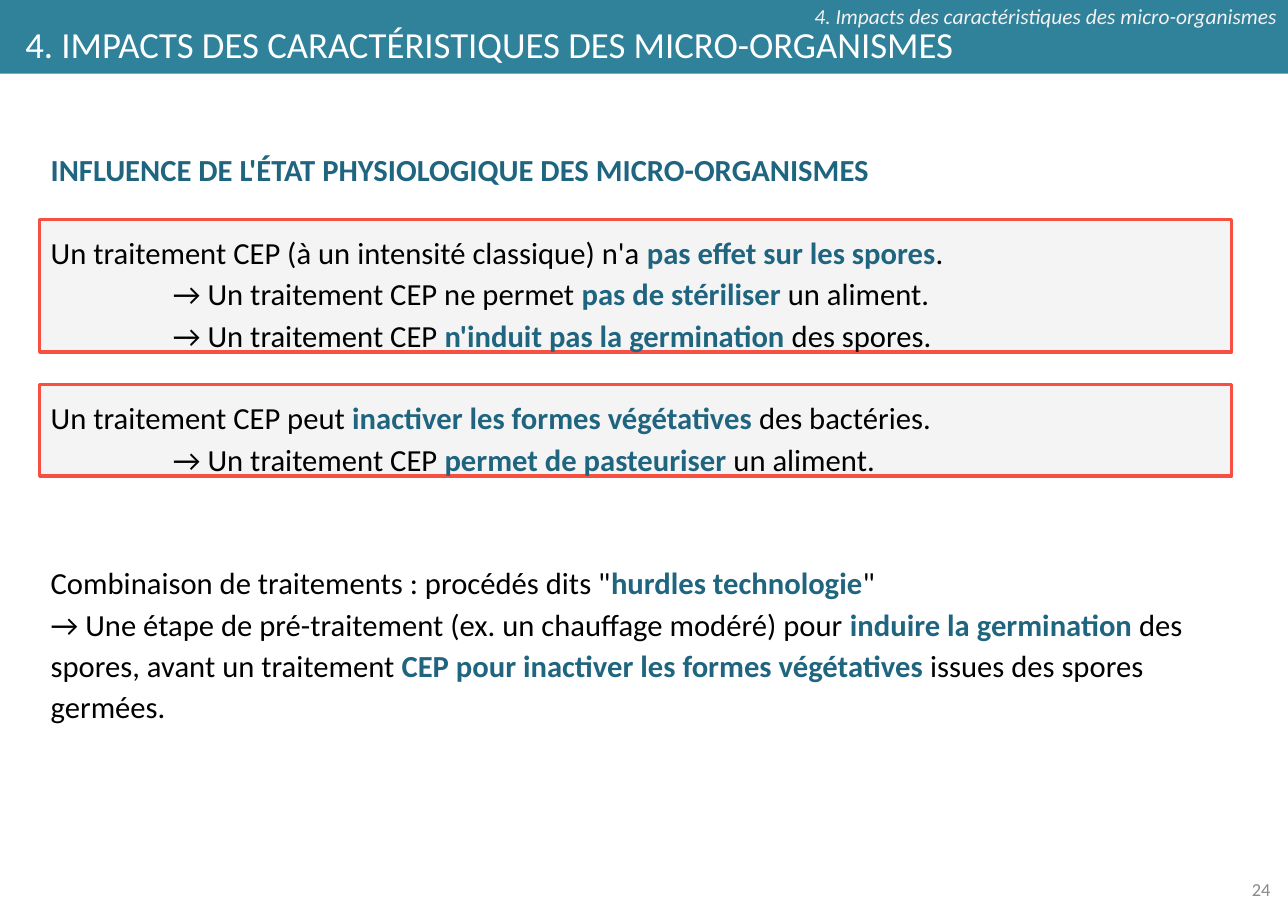
from lxml.etree import SubElement
from pptx import Presentation
from pptx.dml.color import RGBColor
from pptx.enum.shapes import MSO_SHAPE
from pptx.enum.text import MSO_ANCHOR, MSO_AUTO_SIZE, PP_ALIGN
from pptx.oxml.ns import qn
from pptx.util import Inches, Pt

TEAL = RGBColor(0x30, 0x81, 0x9A)
ACCENT = RGBColor(0x20, 0x65, 0x80)
RED = RGBColor(0xF7, 0x4F, 0x41)
PANEL = RGBColor(0xF4, 0xF4, 0xF4)
PALE = RGBColor(0xF2, 0xF2, 0xF2)
GREY = RGBColor(0x89, 0x89, 0x89)
WHITE = RGBColor(0xFF, 0xFF, 0xFF)
BLACK = RGBColor(0, 0, 0)

WIDTH, HEIGHT = Inches(11.69), Inches(8.27)
ROW = Pt(27)
LEFT = Inches(0.36)
PANEL_WIDTH = Inches(10.82)
PANEL_TOP = Inches(1.99)
ARROW_INDENT = Inches(1.11)

BODY = [
    ("**INFLUENCE DE L'ÉTAT PHYSIOLOGIQUE DES MICRO-ORGANISMES**", 0, 0),
    ("Un traitement CEP (à un intensité classique) n'a **pas effet sur les spores**.", 1, 0),
    ("→ Un traitement CEP ne permet **pas de stériliser **un aliment.", 0, ARROW_INDENT),
    ("→ Un traitement CEP **n'induit pas la germination **des spores.", 0, ARROW_INDENT),
    ("Un traitement CEP peut **inactiver les formes végétatives **des bactéries.", 1, 0),
    ("→ Un traitement CEP **permet de pasteuriser **un aliment.", 0, ARROW_INDENT),
    ('Combinaison de traitements : procédés dits "**hurdles technologie**"', 2, 0),
    ("→ Une étape de pré-traitement (ex. un chauffage modéré) pour "
     "**induire la germination **des spores, avant un traitement "
     "**CEP pour inactiver les formes végétatives **issues des spores germées.", 0, 0),
]


def write(p, text, size=20, color=BLACK, italic=False, align=PP_ALIGN.LEFT,
          line=None, before=0, indent=0):
    pPr = p._p.get_or_add_pPr()
    pPr.set("marL", str(indent))
    pPr.set("indent", "0")
    SubElement(pPr, qn("a:buNone"))
    p.alignment = align
    p.space_before = before
    if line:
        p.line_spacing = line
    for i, part in enumerate(text.split("**")):
        if part:
            r = p.add_run()
            r.text = part
            r.font.name = "Calibri"
            r.font.size = Pt(size)
            r.font.bold = i % 2 == 1
            r.font.italic = italic
            r.font.color.rgb = ACCENT if i % 2 else color


def add_panel(s, left, top, width, height, fill, line=None):
    sp = s.shapes.add_shape(MSO_SHAPE.RECTANGLE, left, top, width, height)
    sp.shadow.inherit = False
    sp.fill.solid()
    sp.fill.fore_color.rgb = fill
    if line:
        sp.line.color.rgb = line
        sp.line.width = Pt(2.25)
    else:
        sp.line.fill.background()


def set_frame(sp, left, top, width, height, anchor=MSO_ANCHOR.TOP):
    sp.left, sp.top, sp.width, sp.height = left, top, width, height
    tf = sp.text_frame
    tf.word_wrap = True
    tf.auto_size = MSO_AUTO_SIZE.NONE
    tf.vertical_anchor = anchor
    return tf


def add_label(s, left, top, width, height, text, **fmt):
    sp = s.shapes.add_textbox(left, top, width, height)
    tf = set_frame(sp, left, top, width, height, MSO_ANCHOR.MIDDLE)
    tf.margin_top = tf.margin_bottom = 0
    write(tf.paragraphs[0], text, align=PP_ALIGN.RIGHT, **fmt)


def fill_body(sp):
    tf = set_frame(sp, LEFT, Inches(1.28), Inches(10.97), Inches(5.4))
    for i, (text, skipped, indent) in enumerate(BODY):
        p = tf.add_paragraph() if i else tf.paragraphs[0]
        write(p, text, line=ROW, before=skipped * ROW, indent=indent)


def main():
    prs = Presentation()
    prs.slide_width, prs.slide_height = WIDTH, HEIGHT
    s = prs.slides.add_slide(prs.slide_layouts[1])
    title, body = s.shapes.title, s.placeholders[1]

    add_panel(s, 0, 0, WIDTH, Inches(0.67), TEAL)
    for first_row, lines in ((0, 3), (4, 2)):
        add_panel(s, LEFT, PANEL_TOP + first_row * ROW, PANEL_WIDTH,
                  lines * ROW + Inches(0.08), PANEL, RED)

    for sp in (title, body):
        sp.element.getparent().append(sp.element)
    tf = set_frame(title, Inches(0.13), Inches(0.15), Inches(11.56), Inches(0.38))
    write(tf.paragraphs[0], "4. IMPACTS DES CARACTÉRISTIQUES DES MICRO-ORGANISMES",
          size=24, color=WHITE)
    fill_body(body)

    add_label(s, 0, 0, WIDTH, Inches(0.29),
              "4. Impacts des caractéristiques des micro-organismes",
              size=14, color=PALE, italic=True)
    add_label(s, Inches(11.03), Inches(7.91), Inches(0.6), Inches(0.33), "24",
              size=12, color=GREY)
    prs.save("out.pptx")


if __name__ == "__main__":
    main()
